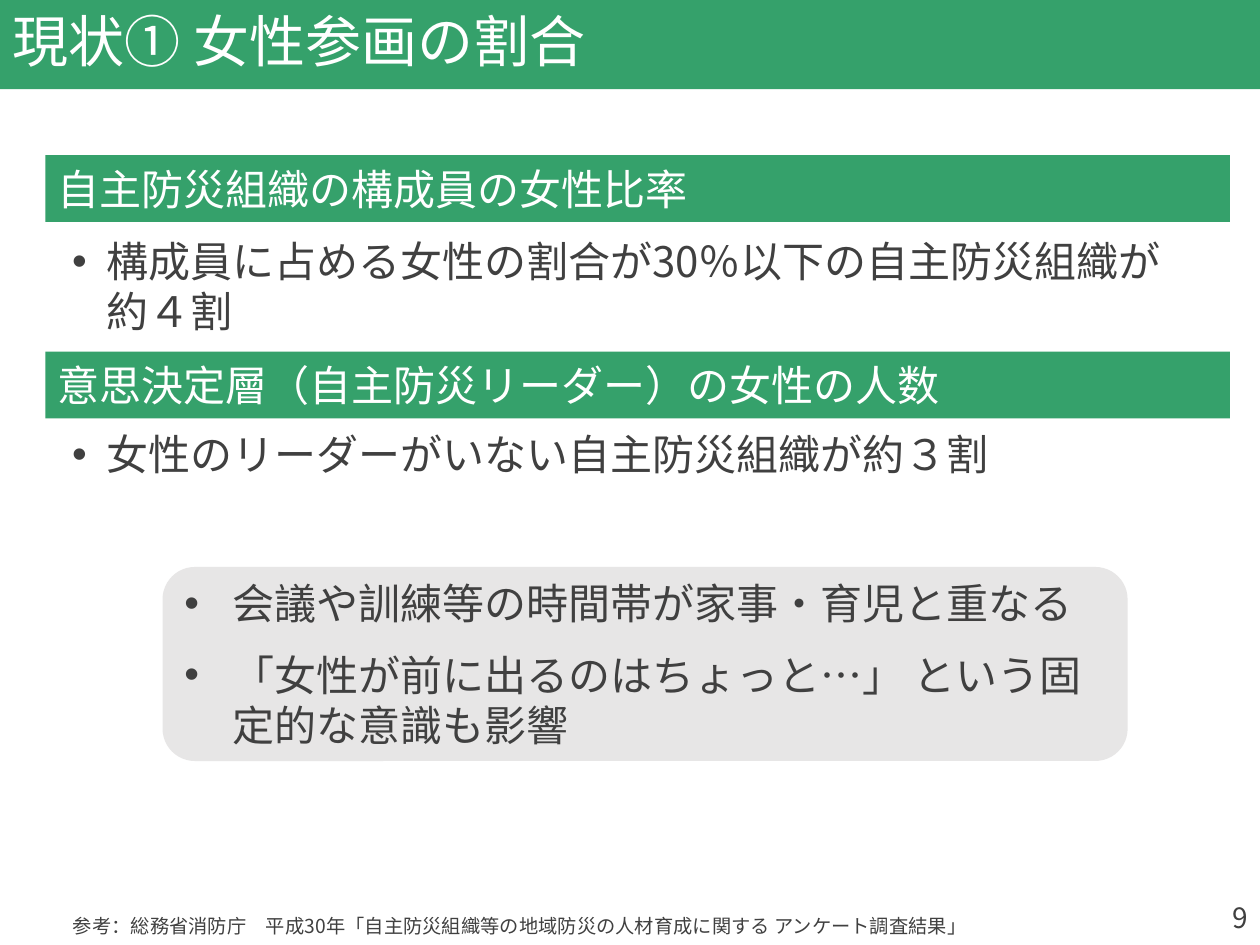
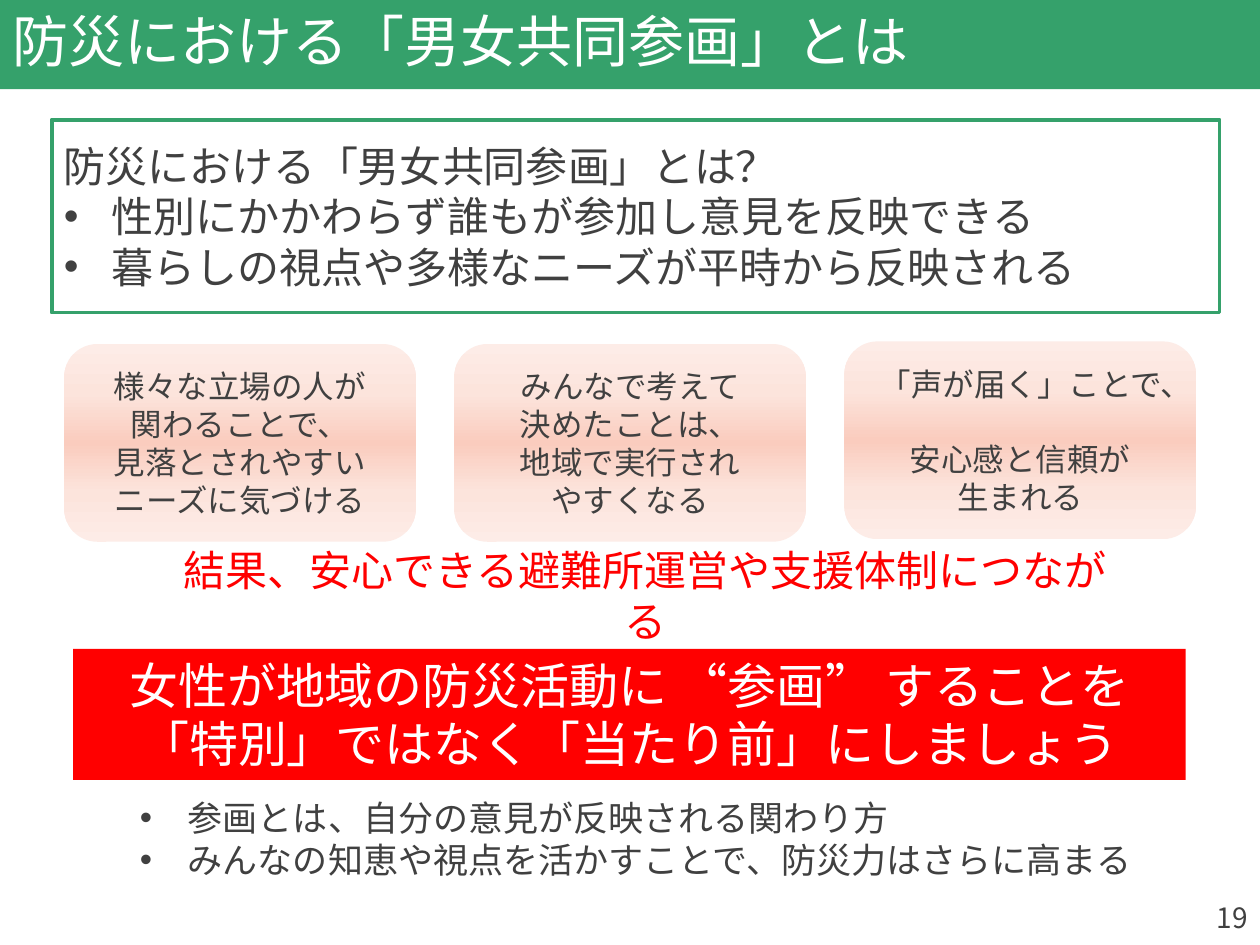
import pptx
import pptx.dml.color
import pptx.enum.shapes
import pptx.enum.text
import pptx.oxml.ns
import pptx.util
from dataclasses import dataclass
from lxml import etree

Pt = pptx.util.Pt
RGB = pptx.dml.color.RGBColor.from_string
qn = pptx.oxml.ns.qn
SHAPE = pptx.enum.shapes.MSO_SHAPE
ALIGN = pptx.enum.text.PP_ALIGN
ANCHOR = pptx.enum.text.MSO_ANCHOR


@dataclass(frozen=True)
class Theme:
    font: str = "Noto Sans CJK JP"
    green: str = "35A16B"
    red: str = "FF0000"
    grey: str = "E7E6E6"
    ink: str = "404040"
    white: str = "FFFFFF"
    glow: tuple = ("FDECE7", "FCE4DC", "FACCBE", "FCE4DC", "FDECE7")
    title: int = 32
    call: int = 28
    body: int = 24
    note: int = 20
    card: int = 18
    number: int = 16
    source: int = 11


theme = Theme()


def write(sp, lines, size, color=theme.ink, align=ALIGN.LEFT, anchor=ANCHOR.TOP,
          after=0, before=0, spacing=1.0, hang=27.4):
    """Fill a shape with paragraphs; a leading bullet makes a list item."""
    tf = sp.text_frame
    tf.word_wrap = True
    tf.auto_size = pptx.enum.text.MSO_AUTO_SIZE.NONE
    tf.vertical_anchor = anchor
    for i, line in enumerate(lines):
        p = tf.add_paragraph() if i else tf.paragraphs[0]
        p.alignment = align
        p.line_spacing = spacing
        p.space_before, p.space_after = Pt(before), Pt(after)
        if line.startswith("•"):
            pPr = p._p.get_or_add_pPr()
            pPr.set("marL", str(Pt(27.4)))
            pPr.set("indent", str(-Pt(hang)))
            etree.SubElement(pPr, qn("a:buFont")).set("typeface", "Arial")
            etree.SubElement(pPr, qn("a:buChar")).set("char", "•")
        for j, part in enumerate(line.lstrip("•").split("\n")):
            if j:
                p.add_line_break()
            r = p.add_run()
            r.text = part
            r.font.size = Pt(size)
            r.font.name = theme.font
            r.font.color.rgb = RGB(color)
            ea = etree.SubElement(r._r.get_or_add_rPr(), qn("a:ea"))
            ea.set("typeface", theme.font)


def add_box(s, kind, at, fill=None, line=None):
    """Add a flat preset shape."""
    sp = s.shapes.add_shape(kind, *map(Pt, at))
    sp.shadow.inherit = False
    if fill:
        sp.fill.solid()
        sp.fill.fore_color.rgb = RGB(fill)
    else:
        sp.fill.background()
    if line:
        sp.line.color.rgb = RGB(line)
        sp.line.width = Pt(2.25)
    else:
        sp.line.fill.background()
    return sp


prs = pptx.Presentation()
prs.slide_width, prs.slide_height = Pt(720), Pt(540)

# Shared title band and page number; layouts 3 and 1 hold two lists and one
slides = []
for layout, title, number in [(3, "現状① 女性参画の割合", "9"),
                              (1, "防災における「男女共同参画」とは", "19")]:
    s = prs.slides.add_slide(prs.slide_layouts[layout])
    sp = s.shapes.title
    sp.left, sp.top, sp.width, sp.height = map(Pt, (0, 0, 720, 51))
    sp.fill.solid()
    sp.fill.fore_color.rgb = RGB(theme.green)
    write(sp, [title], theme.title, theme.white, anchor=ANCHOR.MIDDLE, spacing=0.9)
    sp = s.shapes.add_textbox(*map(Pt, (558, 511.2, 162, 28.8)))
    write(sp, [number], theme.number, align=ALIGN.RIGHT)
    slides.append(s)

# Slide 1: two headings, each with its list
s = slides[0]
findings = [
    (88.6, "自主防災組織の構成員の女性比率",
     (26, 131, 646.6, 90.7), "•構成員に占める女性の割合が30％以下の自主防災組織が約４割"),
    (200.9, "意思決定層（自主防災リーダー）の女性の人数",
     (26, 241.2, 568, 36), "•女性のリーダーがいない自主防災組織が約３割"),
]
for idx, (top, heading, at, item) in enumerate(findings, start=1):
    band = add_box(s, SHAPE.RECTANGLE, (26, top, 676.8, 38.2), theme.green)
    write(band, [heading], theme.body, theme.white, anchor=ANCHOR.MIDDLE)
    sp = s.placeholders[idx]
    sp.left, sp.top, sp.width, sp.height = map(Pt, at)
    write(sp, [item], theme.body, after=6, hang=19.4)

# Slide 1: background reasons and source
reasons = add_box(s, SHAPE.ROUNDED_RECTANGLE, (92.9, 324, 551.5, 110.9), theme.grey)
write(reasons, ["•会議や訓練等の時間帯が家事・育児と重なる",
                "•「女性が前に出るのはちょっと…」 という固定的な意識も影響"],
      theme.body, anchor=ANCHOR.MIDDLE, after=12)
source = s.shapes.add_textbox(*map(Pt, (34.6, 521.3, 626.4, 18.7)))
write(source, ["参考：総務省消防庁　平成30年「自主防災組織等の地域防災の人材育成に関する アンケート調査結果」"],
      theme.source, before=10, spacing=0.8)

# Slide 2: call to action and its list
s = slides[1]
call = add_box(s, SHAPE.RECTANGLE, (41.8, 370.8, 635.8, 74.9), theme.red)
write(call, ["女性が地域の防災活動に “参画” することを",
             "「特別」ではなく「当たり前」にしましょう"],
      theme.call, theme.white, ALIGN.CENTER)
sp = s.placeholders[1]
sp.left, sp.top, sp.width, sp.height = map(Pt, (72.7, 451.4, 635.8, 55.4))
write(sp, ["•参画とは、自分の意見が反映される関わり方",
           "•みんなの知恵や視点を活かすことで、防災力はさらに高まる"], theme.note)

# Slide 2: framed definition
frame = add_box(s, SHAPE.RECTANGLE, (29.5, 68.4, 667.4, 110.2), line=theme.green)
write(frame, ["防災における「男女共同参画」とは？",
              "•性別にかかわらず誰もが参加し意見を反映できる",
              "•暮らしの視点や多様なニーズが平時から反映される"],
      theme.body, anchor=ANCHOR.MIDDLE)

# Slide 2: three benefit cards with a vertical glow
benefits = [
    (196.6, ["様々な立場の人が\n関わることで、\n見落とされやすい", "ニーズに気づける"]),
    (196.6, ["みんなで考えて\n決めたことは、\n地域で実行され\nやすくなる"]),
    (195.1, ["「声が届く」ことで、\n安心感と信頼が\n生まれる"]),
]
for i, (top, lines) in enumerate(benefits):
    card = add_box(s, SHAPE.ROUNDED_RECTANGLE, (36.7 + 222.9 * i, top, 200.9, 113))
    card.fill.gradient()
    card.fill.gradient_angle = 270
    stops = card._element.spPr.find(qn("a:gradFill")).find(qn("a:gsLst"))
    for stop in list(stops):
        stops.remove(stop)
    for j, color in enumerate(theme.glow):
        stop = etree.SubElement(stops, qn("a:gs"), pos=str(25000 * j))
        etree.SubElement(stop, qn("a:srgbClr"), val=color)
    write(card, lines, theme.card, align=ALIGN.CENTER, anchor=ANCHOR.MIDDLE)

# Slide 2: result
result = s.shapes.add_textbox(*map(Pt, (87.1, 309.6, 563, 61.2)))
write(result, ["結果、安心できる避難所運営や支援体制につながる"],
      theme.body, theme.red, ALIGN.CENTER, ANCHOR.MIDDLE)

prs.save("out.pptx")
